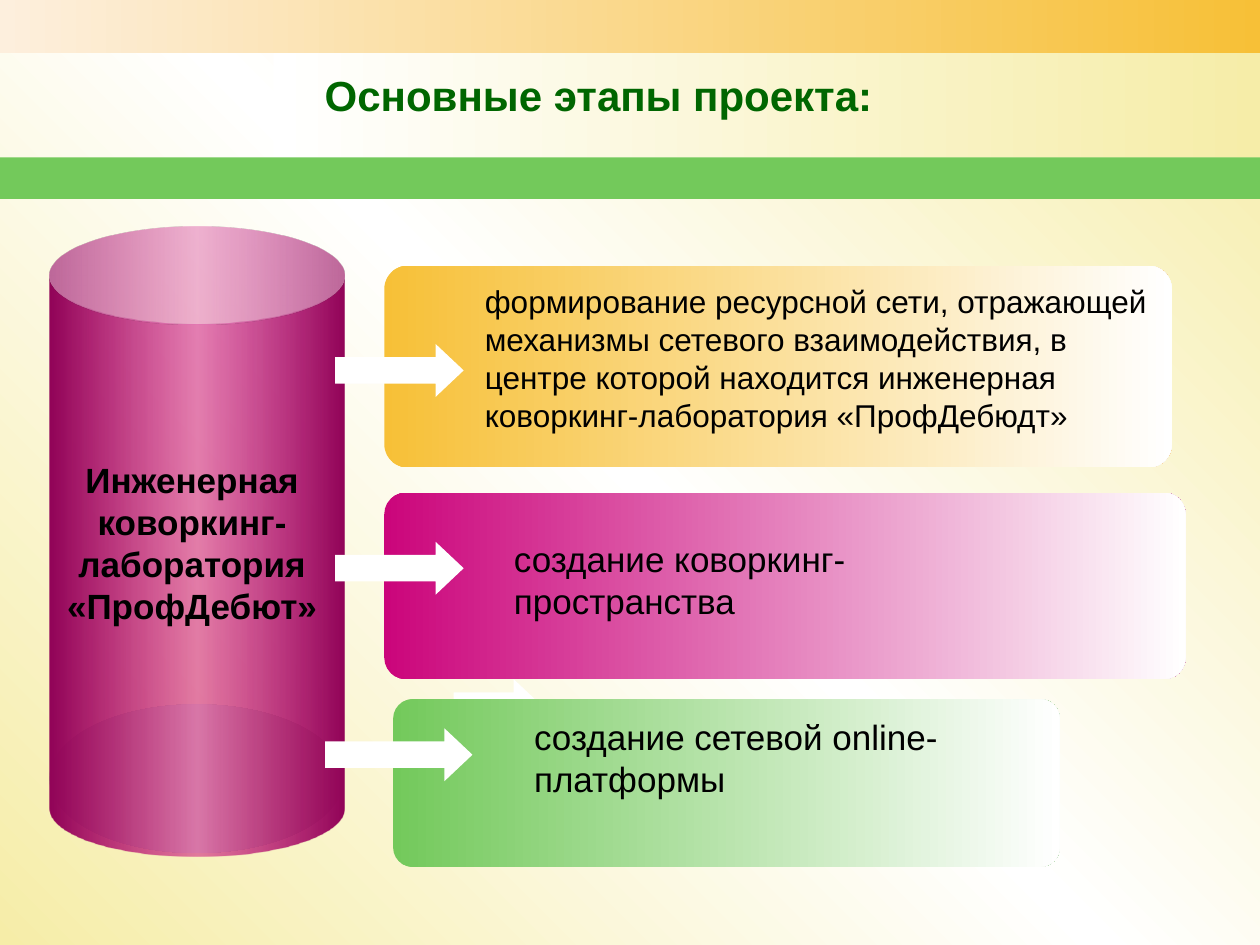
from copy import deepcopy

from lxml.etree import SubElement
from pptx import Presentation
from pptx.dml.color import RGBColor
from pptx.enum.shapes import MSO_SHAPE
from pptx.enum.text import MSO_ANCHOR, PP_ALIGN
from pptx.oxml.ns import qn
from pptx.util import Inches, Pt

WHITE = RGBColor(0xFF, 0xFF, 0xFF)
BLACK = RGBColor(0x00, 0x00, 0x00)
CREAM = RGBColor(0xF6, 0xED, 0xA8)
PEACH = RGBColor(0xFD, 0xEF, 0xDD)
AMBER = RGBColor(0xF7, 0xC0, 0x37)
GREEN = RGBColor(0x73, 0xC9, 0x5B)
DARK_GREEN = RGBColor(0x00, 0x66, 0x00)
MAGENTA = RGBColor(0xCB, 0x05, 0x7B)
PLUM = RGBColor(0x91, 0x04, 0x58)
SAGE = RGBColor(0xC1, 0xCF, 0x9D)
PALE_SAGE = RGBColor(0xE5, 0xEB, 0xD5)

presentation = Presentation()
presentation.slide_width = Inches(10)
presentation.slide_height = Inches(7.5)
slide = presentation.slides.add_slide(presentation.slide_layouts[6])

# Grid of 100 columns by 75 rows
COLUMN = presentation.slide_width / 100
ROW = presentation.slide_height / 75


def place(left, top, width, height):
    return (round(left * COLUMN), round(top * ROW),
            round(width * COLUMN), round(height * ROW))


def paint(fill, colours, angle=0):
    """Fill with one solid colour or with evenly spaced gradient stops."""
    if len(colours) == 1:
        fill.solid()
        fill.fore_color.rgb = colours[0]
        return
    fill.gradient()
    fill.gradient_angle = angle
    first = fill.gradient_stops[0]._gs
    for _ in colours[2:]:
        first.addnext(deepcopy(first))
    for index, (stop, colour) in enumerate(zip(fill.gradient_stops, colours)):
        stop.position = index / (len(colours) - 1)
        stop.color.rgb = colour


# Background
paint(slide.background.fill, [CREAM, WHITE, CREAM], 45)

# Bands, panels, cylinder and arrows, from back to front
ROUNDED, ARROW = MSO_SHAPE.ROUNDED_RECTANGLE, MSO_SHAPE.RIGHT_ARROW
CORNER, ARROW_SHAPE = [0.115], [0.5, 0.53]
shapes = [
    (MSO_SHAPE.RECTANGLE, (0, 0, 100, 4.2), [], [PEACH, AMBER]),
    (MSO_SHAPE.RECTANGLE, (21.7, 4.2, 78.3, 8.3), [], [WHITE, CREAM]),
    (MSO_SHAPE.RECTANGLE, (0, 12.5, 100, 3.3), [], [GREEN]),
    (ROUNDED, (30.5, 21.1, 62.5, 16), CORNER, [AMBER, WHITE]),
    (ROUNDED, (30.5, 39.1, 63.6, 14.8), CORNER, [MAGENTA, WHITE]),
    (ARROW, (36, 53.9, 7, 4.2), ARROW_SHAPE, [WHITE]),
    (MSO_SHAPE.OVAL, (3.9, 55.9, 23.4, 11.8), [], [SAGE, PALE_SAGE, SAGE]),
    (MSO_SHAPE.CAN, (3.9, 18, 23.4, 50), [0.33], [PLUM, MAGENTA, PLUM]),
    (ARROW, (26.6, 43, 10.2, 4.2), ARROW_SHAPE, [WHITE]),
    (ARROW, (26.6, 27.3, 10.2, 4.2), ARROW_SHAPE, [WHITE]),
    (ROUNDED, (31.2, 55.5, 52.9, 13.3), CORNER, [GREEN, WHITE]),
    (ARROW, (25.8, 57.8, 11.7, 4.2), ARROW_SHAPE, [WHITE]),
]
for kind, box, adjustments, colours in shapes:
    shape = slide.shapes.add_shape(kind, *place(*box))
    shape.shadow.inherit = False
    shape.line.fill.background()
    for index, value in enumerate(adjustments):
        shape.adjustments[index] = value
    paint(shape.fill, colours)
    if kind == MSO_SHAPE.CAN:
        # The middle of the cylinder is half transparent
        middle = shape.fill.gradient_stops[1]._gs[0]
        SubElement(middle, qn("a:alpha"), val="50000")

# Title, cylinder label and stages
LEFT, CENTER = PP_ALIGN.LEFT, PP_ALIGN.CENTER
texts = [
    ("Основные этапы проекта:", (0, 3.4, 95, 8.2), 24, DARK_GREEN, True, CENTER),
    ("Инженерная коворкинг-лаборатория «ПрофДебют»",
     (3.9, 35.9, 22.7, 14.5), 20, BLACK, True, CENTER),
    ("формирование ресурсной сети, отражающей механизмы сетевого "
     "взаимодействия, в центре которой находится инженерная "
     "коворкинг-лаборатория «ПрофДебюдт»",
     (37.5, 21.9, 55.6, 13.1), 18, BLACK, False, LEFT),
    ("создание коворкинг-пространства",
     (39.8, 42.2, 45.5, 7.7), 20, BLACK, False, LEFT),
    ("создание сетевой online-платформы",
     (41.4, 56.3, 45.5, 7.7), 20, BLACK, False, LEFT),
]
for text, box, size, colour, bold, alignment in texts:
    text_frame = slide.shapes.add_textbox(*place(*box)).text_frame
    text_frame.word_wrap = True
    text_frame.text = text
    paragraph = text_frame.paragraphs[0]
    paragraph.alignment = alignment
    run = paragraph.runs[0]
    run.font.name = "Arial"
    run.font.size = Pt(size)
    run.font.bold = bold
    run.font.color.rgb = colour
    if colour == DARK_GREEN:
        text_frame.vertical_anchor = MSO_ANCHOR.MIDDLE
    elif bold:
        # Text shadow of the cylinder label
        effects = SubElement(run._r.rPr, qn("a:effectLst"))
        run._r.rPr.find(qn("a:solidFill")).addnext(effects)
        shadow = SubElement(effects, qn("a:outerShdw"), blurRad="38100",
                            dist="38100", dir="2700000", algn="tl")
        SubElement(shadow, qn("a:srgbClr"), val=str(BLACK))

presentation.save("out.pptx")
